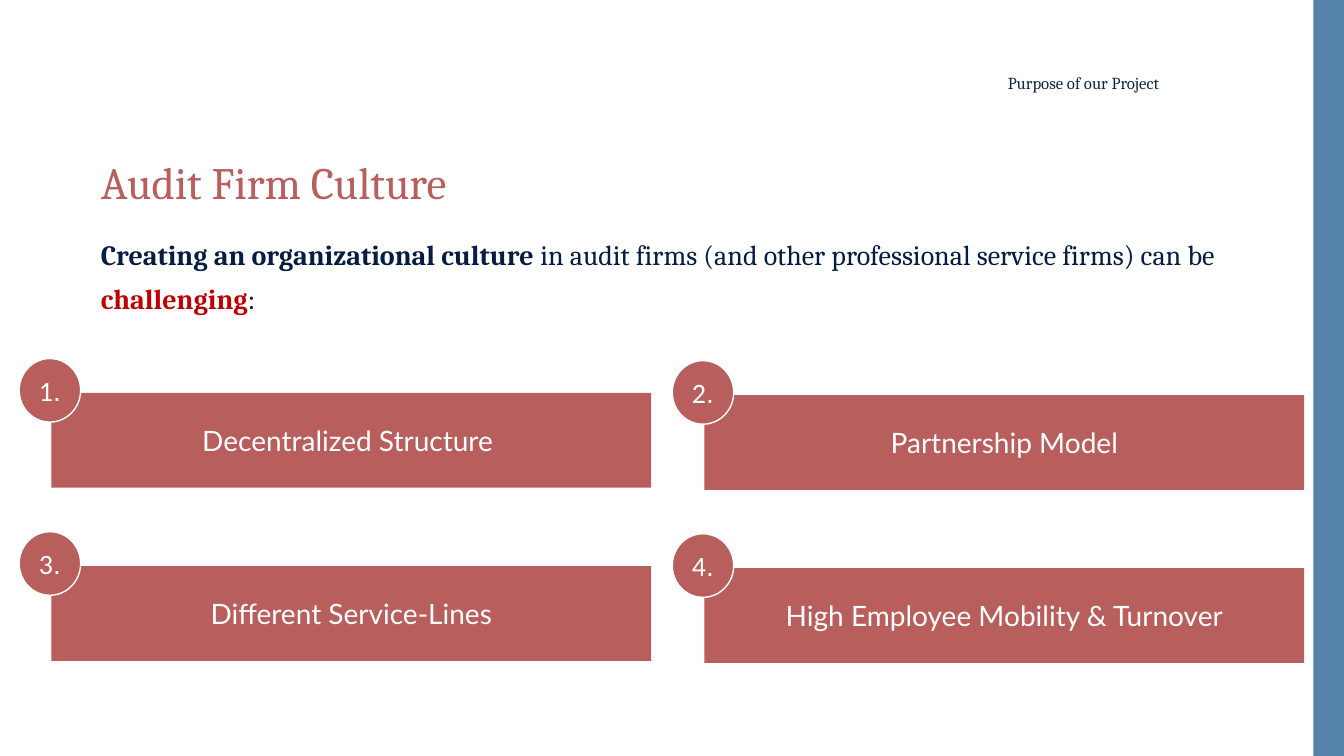
from dataclasses import dataclass

import lxml.etree
import pptx
import pptx.dml.color
import pptx.enum.shapes
import pptx.enum.text
import pptx.oxml.ns
import pptx.util

Pt = pptx.util.Pt
Align = pptx.enum.text.PP_ALIGN
Anchor = pptx.enum.text.MSO_ANCHOR
Preset = pptx.enum.shapes.MSO_SHAPE

COLORS = {
    "rose": "B85E5C",
    "blue": "5482AB",
    "navy": "061D41",
    "header": "0E2841",
    "red": "C00000",
    "white": "FFFFFF",
}


@dataclass
class Box:
    left: float
    top: float
    width: float
    height: float

    def lengths(self) -> tuple:
        return Pt(self.left), Pt(self.top), Pt(self.width), Pt(self.height)


@dataclass
class TextRun:
    text: str
    font: str
    size: float
    color: str
    bold: bool = False


def rgb(name: str) -> pptx.dml.color.RGBColor:
    return pptx.dml.color.RGBColor.from_string(COLORS[name])


def write(shape, runs: list[TextRun], alignment, anchor, spacing: float = 1.0) -> None:
    """Fill the first paragraph of a shape, run by run."""
    frame = shape.text_frame
    frame.word_wrap = True
    frame.auto_size = pptx.enum.text.MSO_AUTO_SIZE.NONE
    frame.vertical_anchor = anchor
    paragraph = frame.paragraphs[0]
    paragraph.alignment = alignment
    paragraph.line_spacing = spacing
    paragraph.space_before = Pt(0)
    for item in runs:
        run = paragraph.add_run()
        run.text = item.text
        run.font.name = item.font
        run.font.size = Pt(item.size)
        run.font.bold = item.bold
        run.font.color.rgb = rgb(item.color)


def place(shape, box: Box) -> None:
    shape.left, shape.top, shape.width, shape.height = box.lengths()


def add_filled(shapes, preset, box: Box, color: str):
    shape = shapes.add_shape(preset, *box.lengths())
    shape.shadow.inherit = False
    shape.fill.solid()
    shape.fill.fore_color.rgb = rgb(color)
    shape.line.fill.background()
    return shape


def add_challenge(slide, number: int, label: str, left: float, top: float) -> None:
    """Group a labelled bar with the numbered badge on its top left corner."""
    group = slide.shapes.add_group_shape()
    bar = add_filled(group.shapes, Preset.RECTANGLE,
                     Box(left + 23, top + 24.6, 428.4, 67.7), "rose")
    write(bar, [TextRun(label, "Lato", 20, "white")], Align.CENTER, Anchor.MIDDLE)

    badge = add_filled(group.shapes, Preset.OVAL, Box(left, top, 43.9, 45.4), "rose")
    badge.line.color.rgb = rgb("white")
    badge.line.width = Pt(1)
    badge.text_frame.margin_left = badge.text_frame.margin_right = Pt(0)
    write(badge, [TextRun(str(number), "Calibri", 20, "white"),
                  TextRun(".", "Arial", 20, "white")], Align.CENTER, Anchor.MIDDLE)


def main() -> None:
    presentation = pptx.Presentation()
    presentation.slide_width, presentation.slide_height = Pt(960), Pt(540)
    slide = presentation.slides.add_slide(presentation.slide_layouts[1])

    # Side band
    add_filled(slide.shapes, Preset.RECTANGLE, Box(938.2, 0, 21.8, 540), "blue")

    # Title
    title = slide.shapes.title
    place(title, Box(64.8, 110.9, 805, 73.4))
    write(title, [TextRun("Audit Firm Culture", "Cambria", 32, "rose")],
          Align.LEFT, Anchor.TOP, 0.9)

    # Introductory sentence, without a bullet
    body = slide.placeholders[1]
    place(body, Box(64.8, 159.1, 882, 311))
    properties = body.text_frame.paragraphs[0]._p.get_or_add_pPr()
    properties.set("marL", "0")
    properties.set("indent", "0")
    lxml.etree.SubElement(properties, pptx.oxml.ns.qn("a:buNone"))
    write(body, [
        TextRun("Creating an organizational culture ", "Cambria", 20, "navy", True),
        TextRun("in audit firms (and other professional service firms) can be ",
                "Cambria", 20, "navy"),
        TextRun("challenging", "Cambria", 20, "red", True),
        TextRun(":", "Cambria", 20, "navy"),
    ], Align.LEFT, Anchor.TOP, 1.3)

    # Section header
    header = slide.shapes.add_textbox(*Box(355, 44.6, 480.2, 28.8).lengths())
    write(header, [TextRun("Purpose of our Project", "Cambria", 12, "header")],
          Align.RIGHT, Anchor.MIDDLE)

    # Numbered challenges in two columns, the right one slightly lower
    challenges = ["Decentralized Structure ", "Partnership Model",
                  "Different Service-Lines", "High Employee Mobility & Turnover"]
    for index, label in enumerate(challenges):
        row, column = divmod(index, 2)
        add_challenge(slide, index + 1, label,
                      13.7 + 466.5 * column, 256.1 + 123.7 * row + 1.5 * column)

    presentation.save("out.pptx")


if __name__ == "__main__":
    main()
